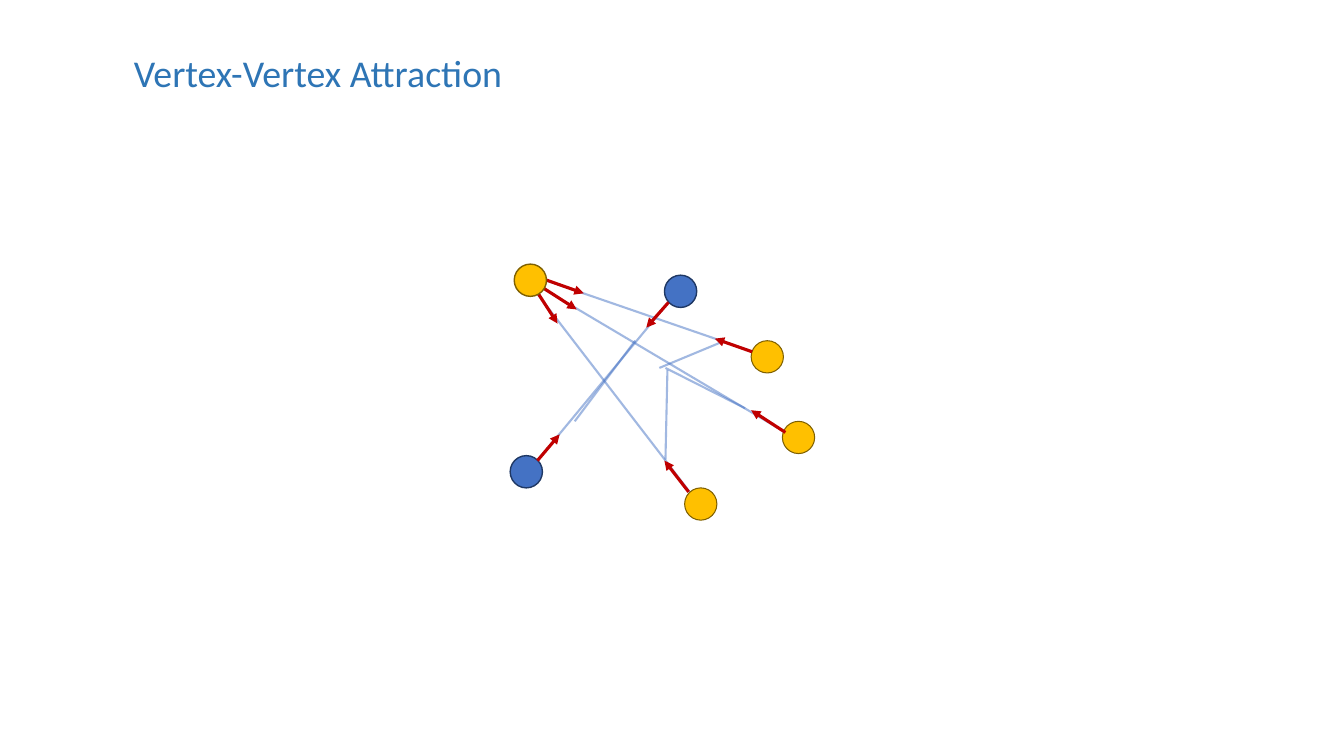
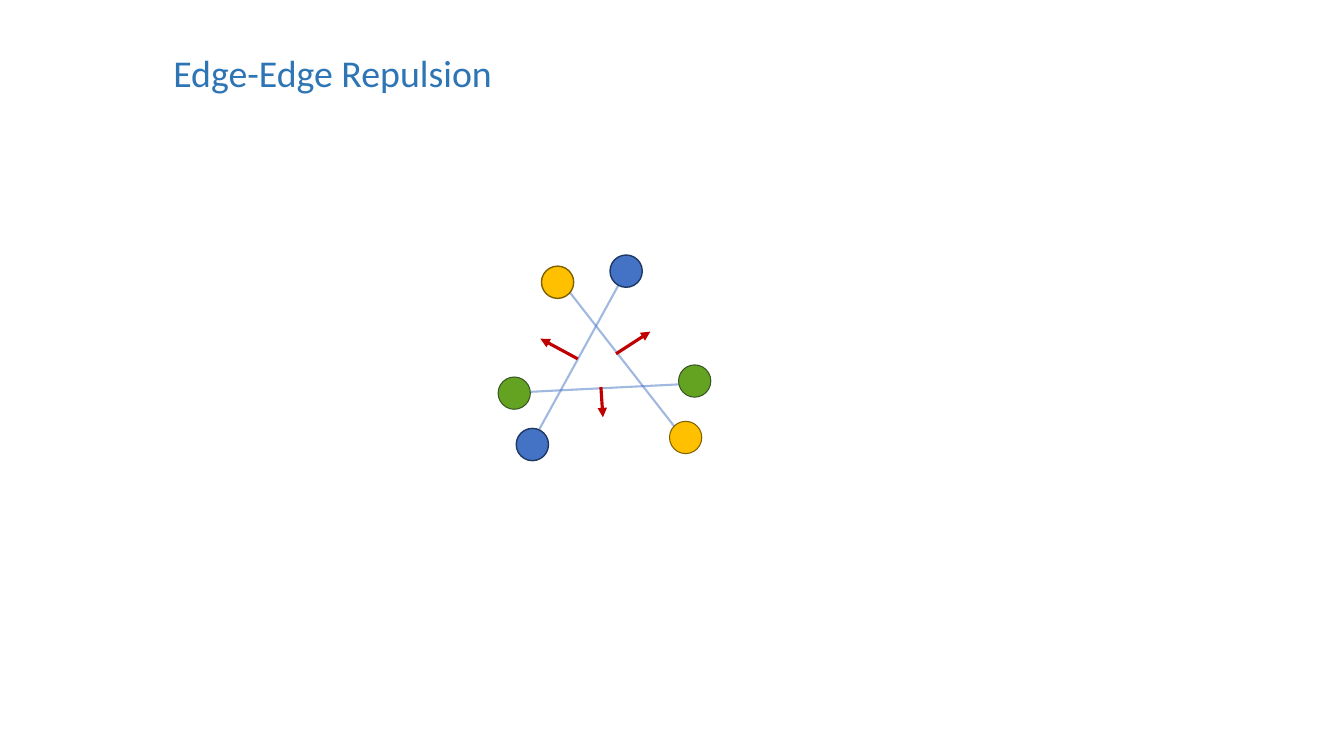
"""Build two slides on the forces between vertices and edges of a graph."""
from lxml.etree import SubElement
from pptx import Presentation
from pptx.dml.color import RGBColor
from pptx.enum.shapes import MSO_CONNECTOR, MSO_SHAPE
from pptx.oxml.ns import qn
from pptx.util import Inches, Pt

TITLE_BLUE = RGBColor(0x2E, 0x75, 0xB5)
EDGE_BLUE = RGBColor(0x44, 0x72, 0xC4)
FORCE_RED = RGBColor(0xC0, 0x00, 0x00)
GOLD = (RGBColor(0xFF, 0xC0, 0x00), RGBColor(0x7F, 0x60, 0x00))
BLUE = (EDGE_BLUE, RGBColor(0x1F, 0x38, 0x64))
GREEN = (RGBColor(0x64, 0xA2, 0x21), RGBColor(0x38, 0x56, 0x23))
DIAMETER = Inches(0.32)

GRAPHS = [
    {
        "title": "Vertex-Vertex Attraction",
        "title_left": 1.23,
        "edges": [
            (7.19, 3.38, 6.54, 3.65), (7.39, 4.05, 6.6, 3.65),
            (6.6, 4.56, 6.62, 3.67), (6.3, 3.38, 5.7, 4.18),
            (5.31, 2.89, 6.84, 4.88), (5.33, 2.83, 7.79, 4.29),
            (5.38, 2.77, 7.47, 3.49), (5.33, 4.57, 6.63, 3),
        ],
        "forces_below": [
            (5.31, 2.74, 5.79, 2.91), (5.33, 2.82, 5.72, 3.07),
            (5.33, 2.9, 5.53, 3.21),
        ],
        "vertices": [
            (7.45, 3.38, GOLD, 0.75), (7.76, 4.18, GOLD, 0.75),
            (6.79, 4.84, GOLD, 0.75), (6.59, 2.73, BLUE, 1),
            (5.06, 4.52, BLUE, 1), (5.1, 2.62, GOLD, 1),
        ],
        "forces_above": [
            (6.63, 3, 6.41, 3.25), (5.33, 4.57, 5.55, 4.31),
            (7.46, 3.49, 7.09, 3.36), (7.79, 4.29, 7.45, 4.07),
            (6.83, 4.88, 6.59, 4.57),
        ],
    },
    {
        "title": "Edge-Edge Repulsion",
        "title_left": 1.62,
        "edges": [
            (5.21, 3.89, 6.8, 3.81), (5.62, 2.86, 6.75, 4.31),
            (5.31, 4.33, 6.15, 2.8),
        ],
        "forces_below": [],
        "vertices": [
            (6.64, 4.18, GOLD, 0.75), (6.05, 2.53, BLUE, 1),
            (5.12, 4.25, BLUE, 1), (5.37, 2.64, GOLD, 1),
            (4.94, 3.74, GREEN, 0.75), (6.73, 3.62, GREEN, 0.75),
        ],
        "forces_above": [
            (6.11, 3.51, 6.45, 3.29), (5.96, 3.84, 5.98, 4.14),
            (5.73, 3.56, 5.36, 3.36),
        ],
    },
]


def add_stroke(slide, ends, color, width):
    """Draw a shadowless straight line and return its a:ln element."""
    stroke = slide.shapes.add_connector(
        MSO_CONNECTOR.STRAIGHT, *(Inches(value) for value in ends))
    stroke.line.color.rgb = color
    stroke.line.width = Pt(width)
    properties = stroke.element.spPr
    SubElement(properties, qn("a:effectLst"))
    return properties.find(qn("a:ln"))


def add_forces(slide, forces):
    """Draw red arrows pointing from the first to the second end."""
    for ends in forces:
        outline = add_stroke(slide, ends, FORCE_RED, 2.25)
        SubElement(outline, qn("a:tailEnd"), type="triangle")


presentation = Presentation()
presentation.slide_width = Inches(13.33)
presentation.slide_height = Inches(7.5)

for graph in GRAPHS:
    slide = presentation.slides.add_slide(presentation.slide_layouts[6])

    for ends in graph["edges"]:
        outline = add_stroke(slide, ends, EDGE_BLUE, 1.5)
        SubElement(outline.find(".//" + qn("a:srgbClr")), qn("a:alpha"), val="50000")

    add_forces(slide, graph["forces_below"])

    for left, top, (fill, border), width in graph["vertices"]:
        vertex = slide.shapes.add_shape(
            MSO_SHAPE.OVAL, Inches(left), Inches(top), DIAMETER, DIAMETER)
        vertex.shadow.inherit = False
        vertex.fill.solid()
        vertex.fill.fore_color.rgb = fill
        vertex.line.color.rgb = border
        vertex.line.width = Pt(width)

    add_forces(slide, graph["forces_above"])

    title = slide.shapes.add_textbox(
        Inches(graph["title_left"]), Inches(0.44), Inches(4.31), Inches(0.57))
    title.text_frame.word_wrap = True
    heading = title.text_frame.paragraphs[0]
    heading.text = graph["title"]
    heading.font.name = "Calibri"
    heading.font.size = Pt(27)
    heading.font.color.rgb = TITLE_BLUE

presentation.save("out.pptx")
